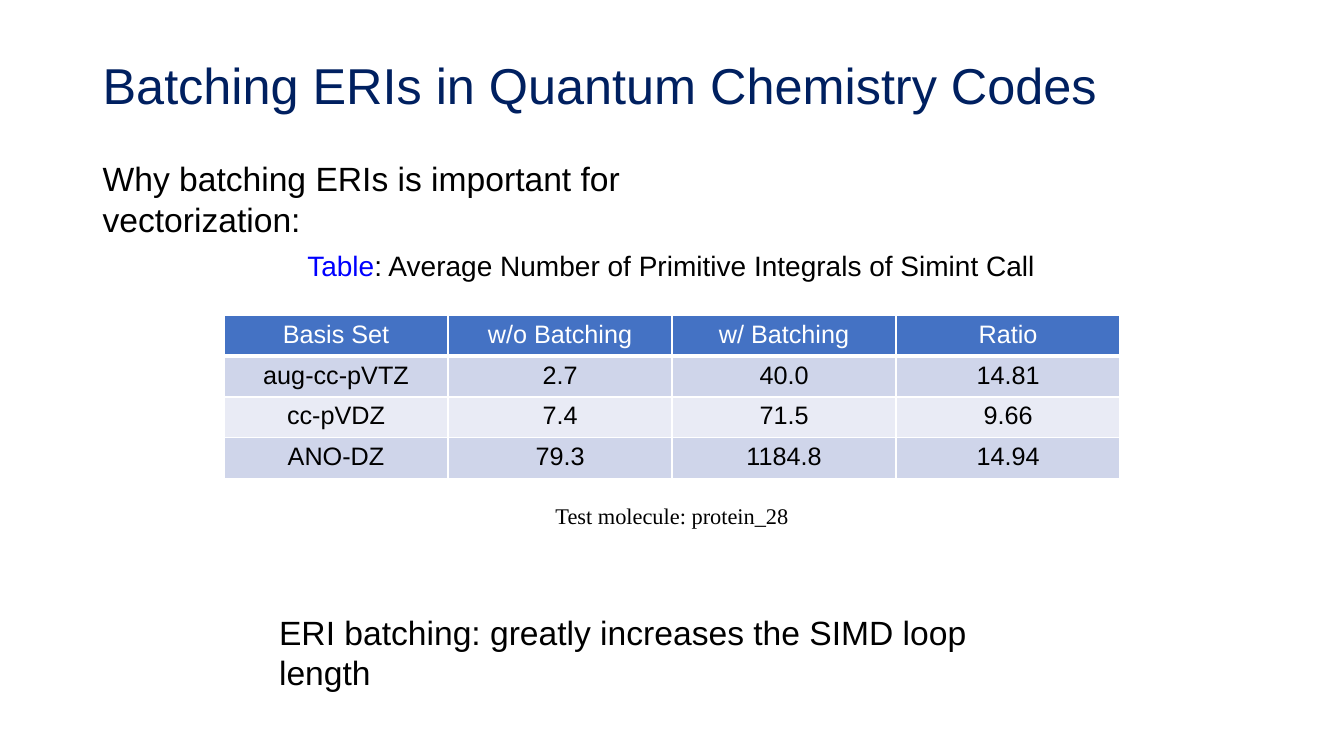
from dataclasses import dataclass

from lxml.etree import SubElement
from pptx import Presentation
from pptx.dml.color import RGBColor as Rgb
from pptx.enum.text import MSO_ANCHOR as Anchor, MSO_AUTO_SIZE as AutoSize, PP_ALIGN as Align
from pptx.oxml.ns import qn
from pptx.util import Inches, Pt


@dataclass(frozen=True)
class Theme:
    """Colours, fonts and type sizes of the slide."""
    sans: str = "Arial"
    serif: str = "Times New Roman"
    title: str = "002060"
    ink: str = "000000"
    accent: str = "0000FF"
    white: str = "FFFFFF"
    header: str = "4472C4"
    bands: tuple = ("CFD5EA", "E9EBF5")
    title_size: int = 36
    body_size: int = 24
    caption_size: int = 20
    cell_size: int = 18
    note_size: int = 16
    rule: int = 1
    header_rule: int = 3


THEME = Theme()
WIDTH, HEIGHT = Inches(13.33), Inches(7.5)
RESULTS = (
    ("Basis Set", "w/o Batching", "w/ Batching", "Ratio"),
    ("aug-cc-pVTZ", "2.7", "40.0", "14.81"),
    ("cc-pVDZ", "7.4", "71.5", "9.66"),
    ("ANO-DZ", "79.3", "1184.8", "14.94"),
)


def place(left, top, width, height):
    """Turn percentages of the slide into a position and size."""
    return [round(share * side / 100)
            for share, side in zip((left, top, width, height), (WIDTH, HEIGHT) * 2)]


def style(span, size, color, font=THEME.sans):
    """Give a run its font, size and colour."""
    span.font.name, span.font.size = font, Pt(size)
    span.font.color.rgb = Rgb.from_string(color)


def add_text(page, area, text, size, color=THEME.ink, font=THEME.sans, wrap=True):
    """Add a text box that grows with its text and return it."""
    box = page.shapes.add_textbox(*place(*area))
    frame = box.text_frame
    frame.text = text
    frame.word_wrap = wrap
    frame.auto_size = AutoSize.SHAPE_TO_FIT_TEXT
    style(frame.paragraphs[0].runs[0], size, color, font)
    return box


def add_title(page, area, text):
    """Add the slide title, centred vertically in its area."""
    frame = add_text(page, area, text, THEME.title_size, THEME.title).text_frame
    frame.auto_size = AutoSize.NONE
    frame.vertical_anchor = Anchor.MIDDLE
    frame.paragraphs[0].line_spacing = 0.9


def add_caption(page, area, label, text):
    """Add a table caption that opens with a coloured label."""
    box = add_text(page, area, label, THEME.caption_size, THEME.accent, wrap=False)
    span = box.text_frame.paragraphs[0].add_run()
    span.text = text
    style(span, THEME.caption_size, THEME.ink)


def add_border(cell, side, points):
    """Draw one white edge of a table cell."""
    line = SubElement(cell._tc.get_or_add_tcPr(), qn(f"a:ln{side}"), w=str(Pt(points)))
    SubElement(SubElement(line, qn("a:solidFill")), qn("a:srgbClr"), val=THEME.white)


def style_cell(cell, row):
    """Give a cell its borders, fill and centred text."""
    thick = {(0, "B"), (1, "T")}
    for side in "LRTB":
        add_border(cell, side, THEME.header_rule if (row, side) in thick else THEME.rule)
    fill = THEME.bands[(row - 1) % 2] if row else THEME.header
    cell.fill.solid()
    cell.fill.fore_color.rgb = Rgb.from_string(fill)
    para = cell.text_frame.paragraphs[0]
    para.alignment = Align.CENTER
    style(para.runs[0], THEME.cell_size, THEME.ink if row else THEME.white)


def add_results(page, area, rows):
    """Add a table with equal columns, a header row and banded rows."""
    table = page.shapes.add_table(len(rows), len(rows[0]), *place(*area)).table
    for row, values in enumerate(rows):
        for column, value in enumerate(values):
            cell = table.cell(row, column)
            cell.text_frame.text = value
            style_cell(cell, row)


def main():
    """Build the slide and save it."""
    deck = Presentation()
    deck.slide_width, deck.slide_height = WIDTH, HEIGHT
    page = deck.slides.add_slide(deck.slide_layouts[6])
    add_title(page, (6.9, 5.33, 86.27, 12.8), "Batching ERIs in Quantum Chemistry Codes")
    add_text(page, (6.9, 20.27, 54.8, 6.67),
             "Why batching ERIs is important for vectorization:", THEME.body_size)
    add_results(page, (16.67, 41.73, 66.67, 21.6), RESULTS)
    add_caption(page, (22.13, 32.27, 55.81, 5.87), "Table",
                ": Average Number of Primitive Integrals of Simint Call")
    note = add_text(page, (31.2, 65.73, 37.6, 4.93), "Test molecule: protein_28",
                    THEME.note_size, font=THEME.serif)
    note.text_frame.paragraphs[0].alignment = Align.CENTER
    add_text(page, (20.03, 80.27, 59.4, 6.67),
             "ERI batching: greatly increases the SIMD loop length", THEME.body_size)
    deck.save("out.pptx")


if __name__ == "__main__":
    main()
